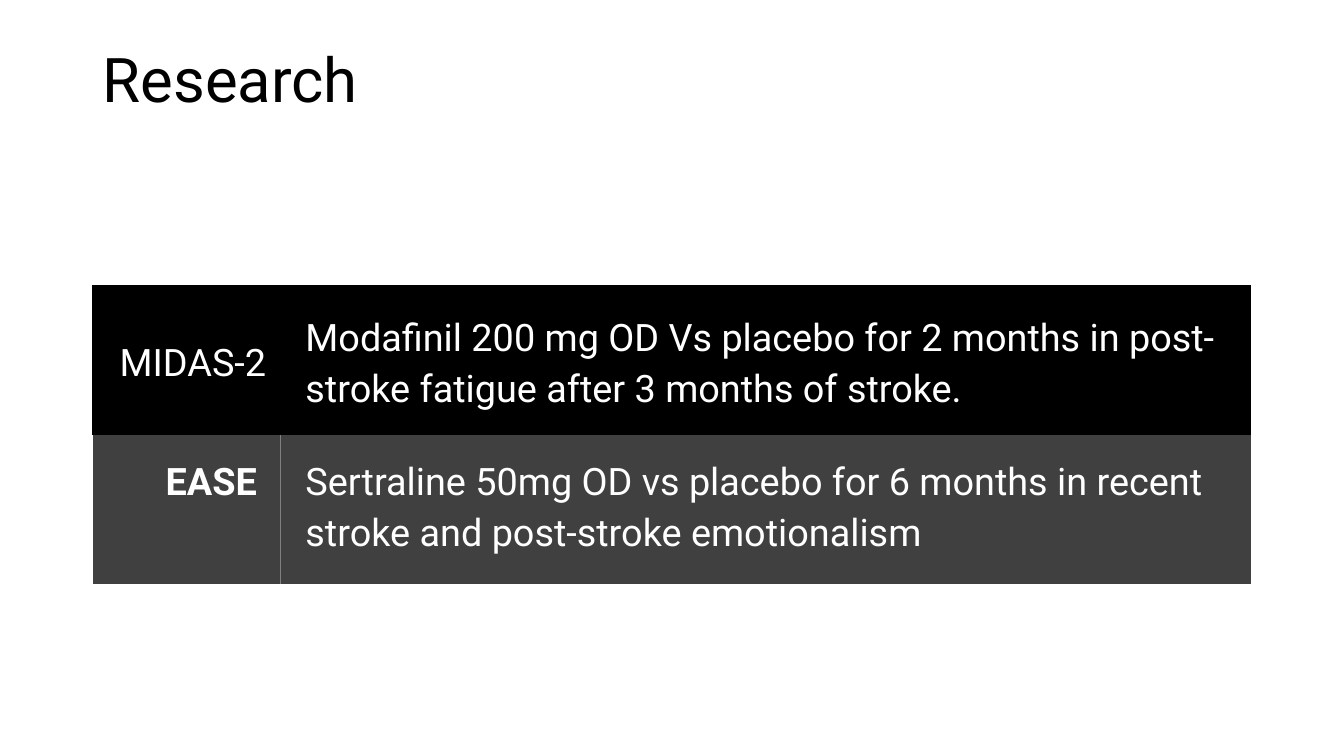
from lxml import etree
from pptx import Presentation, util as u
from pptx.dml.color import RGBColor
from pptx.enum import text as t
from pptx.oxml.ns import qn

FONT = "Roboto"
BLACK, GREY, LINE, WHITE = "000000", "404040", "808080", "FFFFFF"
ALIGN, ANCHOR = t.PP_ALIGN, t.MSO_ANCHOR
TRIALS = [
    ("MIDAS-2", "Modafinil 200 mg OD Vs placebo for 2 months in "
     "post-stroke fatigue after 3 months of stroke."),
    ("EASE ", "Sertraline 50mg OD vs placebo for 6 months in recent "
     "stroke and post-stroke emotionalism"),
]
LOOKS = [(BLACK, ANCHOR.MIDDLE), (GREY, ANCHOR.TOP)]
EDGES = {
    (0, 0): [("L", BLACK, 1.5), ("T", BLACK, 1.5)],
    (0, 1): [("T", BLACK, 1.5)],
    (1, 0): [("R", LINE, 0.5)],
    (1, 1): [("L", LINE, 0.5)],
}
PLAIN = "{2D5ABB26-0587-4C30-8999-92F81FD0307C}"


def color(code):
    """Turn a hex string into a colour."""
    return RGBColor.from_string(code)


def write(para, words, size, code, space, bold=False):
    """Add one styled run to a paragraph."""
    para.line_spacing = space
    run = para.add_run()
    run.text = words
    font = run.font
    font.name, font.size, font.bold = FONT, u.Pt(size), bold
    font.color.rgb = color(code)


def edge(cell, side, code, width):
    """Draw one border of a cell."""
    line = etree.SubElement(cell._tc.get_or_add_tcPr(), qn("a:ln" + side),
                            w=str(u.Pt(width)))
    fill = etree.SubElement(line, qn("a:solidFill"))
    etree.SubElement(fill, qn("a:srgbClr"), val=code)


def title(slide, left, top, width, height):
    """Place the slide title in its box."""
    box = slide.shapes.add_textbox(*map(u.Inches, (left, top, width, height)))
    frame = box.text_frame
    frame.word_wrap = True
    frame.vertical_anchor = ANCHOR.MIDDLE
    write(frame.paragraphs[0], "Research", 44, BLACK, 0.9)


def trials(slide, left, top, width, height):
    """Place the table of trials in its box."""
    frame = slide.shapes.add_table(
        len(TRIALS), 2, *map(u.Inches, (left, top, width, height)))
    table = frame.table
    table.first_row = table.horz_banding = False
    table._tbl.tblPr.find(qn("a:tableStyleId")).text = PLAIN
    name = 1.86
    for col, wide in zip(table.columns, (name, width - name)):
        col.width = u.Inches(wide)
    for r, (row, (fill, anchor)) in enumerate(zip(TRIALS, LOOKS)):
        for c, words in enumerate(row):
            cell = table.cell(r, c)
            cell.margin_left, cell.margin_right = u.Inches(0.25), u.Inches(0.14)
            cell.margin_top = cell.margin_bottom = u.Inches(0.19)
            cell.vertical_anchor = anchor
            for side, code, thick in EDGES[r, c]:
                edge(cell, side, code, thick)
            cell.fill.solid()
            cell.fill.fore_color.rgb = color(fill)
            para = cell.text_frame.paragraphs[0]
            para.alignment = ALIGN.LEFT if c else ALIGN.RIGHT
            para.space_after = u.Pt(10)
            write(para, words, 27, WHITE, 1.15, bold=(r, c) == (1, 0))


def main():
    """Build and save the slide."""
    deck = Presentation()
    deck.slide_width, deck.slide_height = u.Inches(13.33), u.Inches(7.5)
    slide = deck.slides.add_slide(deck.slide_layouts[6])
    title(slide, 0.92, 0.27, 11.49, 1.1)
    trials(slide, 0.92, 2.84, 11.49, 2.95)
    deck.save("out.pptx")


if __name__ == "__main__":
    main()
